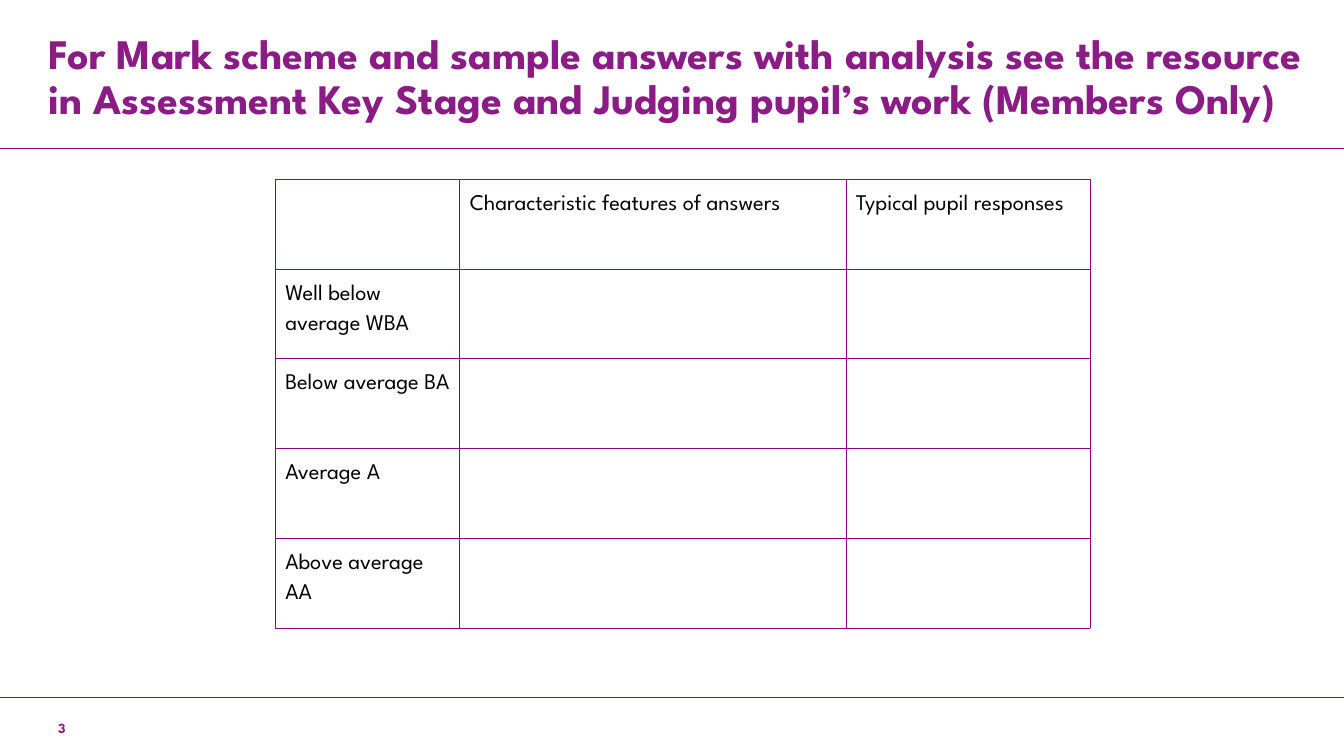
from dataclasses import dataclass

from lxml import etree
from pptx import Presentation
from pptx.dml.color import RGBColor as RGB
from pptx.enum.shapes import MSO_CONNECTOR as CONN
from pptx.enum.text import MSO_ANCHOR as ANCHOR, PP_ALIGN as ALIGN
from pptx.oxml.ns import qn
from pptx.util import Inches, Pt

# Content
TITLE = ("For Mark scheme and sample answers with analysis see the resource in "
         "Assessment Key Stage and Judging pupil’s work (Members Only)")
HEADINGS = ["", "Characteristic features of answers", "Typical pupil responses"]
LEVELS = ["Well below average WBA", "Below average BA", "Average A", "Above average AA"]
PAGE = "3"


@dataclass(frozen=True)
class Theme:
    font: str = "League Spartan"
    heading: RGB = RGB(0x8B, 0x1C, 0x86)
    rule: RGB = RGB(0x8C, 0x00, 0x84)
    text: RGB = RGB(0, 0, 0)
    paper: RGB = RGB(255, 255, 255)
    title_size: int = 30
    cell_size: int = 16
    page_size: int = 10
    line_width: float = 0.5


THEME = Theme()

# Layout, in inches
WIDTH, HEIGHT = 13.33, 7.5
RULES_Y = [6.92, 1.47]
TABLE_LEFT, TABLE_TOP = 2.73, 1.78
COL_WIDTHS = [1.83, 3.83, 2.42]
ROW_HEIGHT = 0.89


def add_run(p, text, size, color, bold=False):
    r = p.add_run()
    r.text = text
    r.font.name, r.font.size, r.font.bold = THEME.font, Pt(size), bold
    r.font.color.rgb = color


def add_rule(slide, y):
    line = slide.shapes.add_connector(CONN.STRAIGHT, 0, Inches(y), Inches(WIDTH), Inches(y))
    line.line.color.rgb = THEME.rule
    line.line.width = Pt(THEME.line_width)
    etree.SubElement(line._element.spPr, qn("a:effectLst"))


def format_cell(cell, text):
    # Borders precede the fill in the cell properties
    tc_pr = cell._tc.get_or_add_tcPr()
    for side in ("lnL", "lnR", "lnT", "lnB"):
        ln = etree.SubElement(tc_pr, qn(f"a:{side}"), w=str(Pt(THEME.line_width)))
        fill = etree.SubElement(ln, qn("a:solidFill"))
        etree.SubElement(fill, qn("a:srgbClr"), val=str(THEME.rule))
    cell.fill.solid()
    cell.fill.fore_color.rgb = THEME.paper
    if text:
        p = cell.text_frame.paragraphs[0]
        p.line_spacing = 1.5
        add_run(p, text, THEME.cell_size, THEME.text)


def main():
    prs = Presentation()
    prs.slide_width, prs.slide_height = Inches(WIDTH), Inches(HEIGHT)
    slide = prs.slides.add_slide(prs.slide_layouts[5])

    # Title
    title = slide.shapes.title
    title.left, title.top = Inches(0.38), Inches(0.34)
    title.width, title.height = Inches(WIDTH - 0.38), Inches(0.88)
    tf = title.text_frame
    tf.word_wrap, tf.vertical_anchor = True, ANCHOR.MIDDLE
    p = tf.paragraphs[0]
    p.alignment, p.line_spacing = ALIGN.LEFT, 0.9
    add_run(p, TITLE, THEME.title_size, THEME.heading, bold=True)

    # Horizontal rules
    for y in RULES_Y:
        add_rule(slide, y)

    # Table of attainment levels
    rows = [HEADINGS] + [[level, "", ""] for level in LEVELS]
    table = slide.shapes.add_table(
        len(rows), len(COL_WIDTHS), Inches(TABLE_LEFT), Inches(TABLE_TOP),
        Inches(sum(COL_WIDTHS)), Inches(ROW_HEIGHT * len(rows))).table
    table.first_row = table.horz_banding = False
    for col, width in zip(table.columns, COL_WIDTHS):
        col.width = Inches(width)
    for i, row in enumerate(rows):
        table.rows[i].height = Inches(ROW_HEIGHT)
        for j, text in enumerate(row):
            format_cell(table.cell(i, j), text)

    # Page number
    box = slide.shapes.add_textbox(Inches(-0.25), Inches(7.09), Inches(1), Inches(0.27))
    box.text_frame.word_wrap = True
    p = box.text_frame.paragraphs[0]
    p.alignment = ALIGN.RIGHT
    add_run(p, PAGE, THEME.page_size, THEME.heading, bold=True)

    prs.save("out.pptx")


if __name__ == "__main__":
    main()
